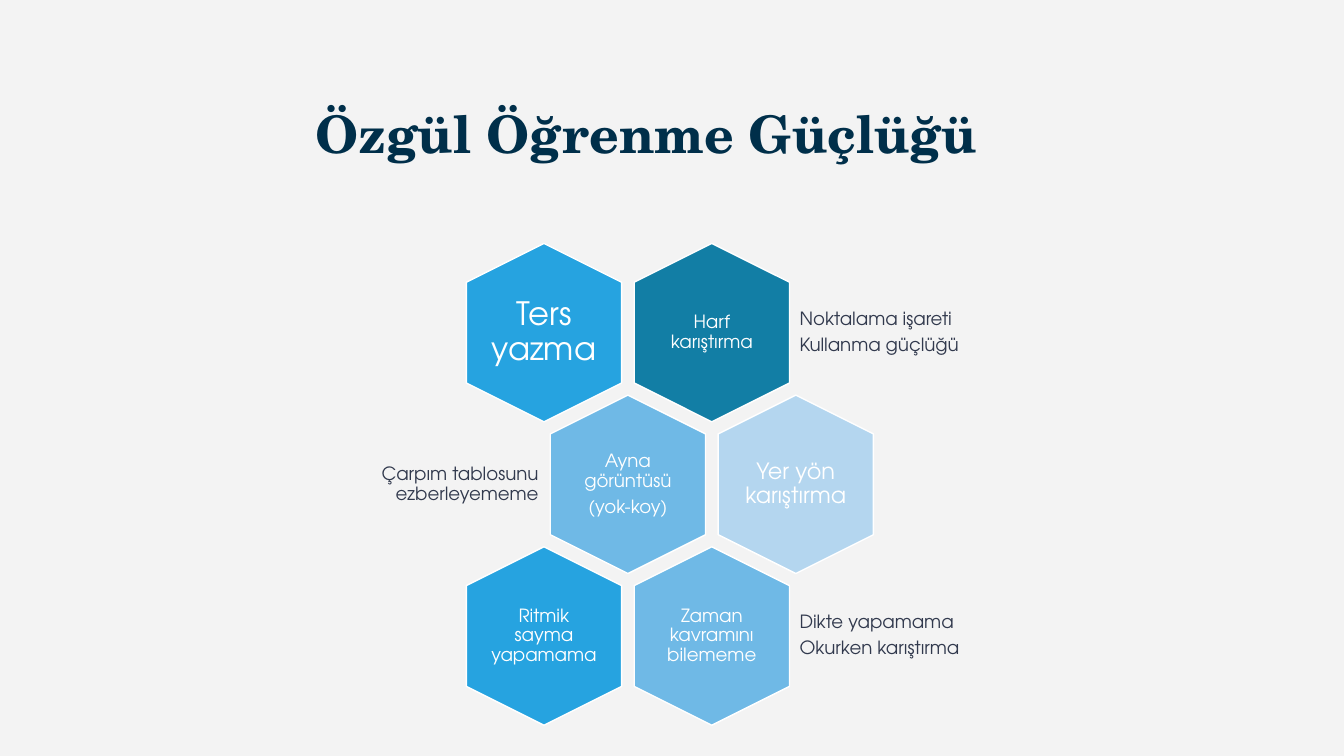
"""Build a slide with a honeycomb of signs of specific learning difficulty."""
from dataclasses import dataclass

from pptx import Presentation
from pptx.dml.color import RGBColor
from pptx.enum.shapes import MSO_SHAPE
from pptx.enum.text import MSO_ANCHOR, PP_ALIGN
from pptx.util import Inches, Pt


@dataclass(frozen=True)
class Theme:
    background: str = "F3F3F3"
    title: str = "002F4A"
    note: str = "31394D"
    white: str = "FFFFFF"
    bright: str = "26A3E0"
    deep: str = "127EA5"
    soft: str = "6FB9E6"
    pale: str = "B4D6EF"
    title_font: str = "TeX Gyre Schola"
    body_font: str = "TeX Gyre Adventor"
    title_size: float = 37
    large_size: float = 23
    medium_size: float = 16
    body_size: float = 13


theme = Theme()


def write_text(shape, lines, size, color, align, font=theme.body_font, bold=False, inset=0.05):
    frame = shape.text_frame
    frame.word_wrap = True
    frame.vertical_anchor = MSO_ANCHOR.MIDDLE
    frame.margin_left = frame.margin_right = Inches(inset)
    frame.margin_top = frame.margin_bottom = Inches(0.05)
    for index, line in enumerate(lines):
        paragraph = frame.add_paragraph() if index else frame.paragraphs[0]
        paragraph.alignment = align
        paragraph.line_spacing = 0.9
        paragraph.space_before = Pt(4.5 if index else 0)
        run = paragraph.add_run()
        run.text = line
        run.font.name = font
        run.font.size = Pt(size)
        run.font.bold = bold
        run.font.color.rgb = RGBColor.from_string(color)


presentation = Presentation()
presentation.slide_width = Inches(13.33)
presentation.slide_height = Inches(7.5)
slide = presentation.slides.add_slide(presentation.slide_layouts[5])
slide.background.fill.solid()
slide.background.fill.fore_color.rgb = RGBColor.from_string(theme.background)

title = slide.shapes.title
title.left, title.top = Inches(0.91), Inches(0.61)
title.width, title.height = Inches(11), Inches(1.5)
write_text(title, ["Özgül Öğrenme Güçlüğü"], theme.title_size, theme.title,
           PP_ALIGN.CENTER, theme.title_font, True, 0.1)

comb_left, comb_top = 4.51, 2.53
column_step, row_step = 1.665, 1.505
hexagon_width, hexagon_height = 1.77, 1.54
label_width, label_height = 1.06, 1.22

hexagons = [
    (0, 1, theme.deep, theme.body_size, 0.05, ["Harf karıştırma"]),
    (0, 0, theme.bright, theme.large_size, 0, ["Ters yazma"]),
    (1, 0.5, theme.soft, theme.body_size, 0.05, ["Ayna görüntüsü", "(yok-koy)"]),
    (1, 1.5, theme.pale, theme.medium_size, 0, ["Yer yön karıştırma"]),
    (2, 1, theme.soft, theme.body_size, 0.05, ["Zaman kavramını bilememe"]),
    (2, 0, theme.bright, theme.body_size, 0, ["Ritmik sayma yapamama"]),
]
for row, column, color, size, inset, lines in hexagons:
    left = comb_left + column * column_step
    top = comb_top + row * row_step
    hexagon = slide.shapes.add_shape(MSO_SHAPE.HEXAGON, Inches(left), Inches(top),
                                     Inches(hexagon_width), Inches(hexagon_height))
    hexagon.rotation = 90
    hexagon.adjustments[0] = 0.25
    hexagon.shadow.inherit = False
    hexagon.fill.solid()
    hexagon.fill.fore_color.rgb = RGBColor.from_string(color)
    hexagon.line.color.rgb = RGBColor.from_string(theme.white)
    hexagon.line.width = Pt(1)
    label = slide.shapes.add_textbox(Inches(left + (hexagon_width - label_width) / 2),
                                     Inches(top + (hexagon_height - label_height) / 2),
                                     Inches(label_width), Inches(label_height))
    write_text(label, lines, size, theme.white, PP_ALIGN.CENTER, inset=inset)

notes = [
    (0, 7.88, 1.98, PP_ALIGN.LEFT, ["Noktalama işareti", "Kullanma güçlüğü"]),
    (1, 3.48, 1.91, PP_ALIGN.RIGHT, ["Çarpım tablosunu ezberleyememe"]),
    (2, 7.88, 1.98, PP_ALIGN.LEFT, ["Dikte yapamama", "Okurken karıştırma"]),
]
note_height = 1.06
for row, left, width, align, lines in notes:
    top = comb_top + row * row_step + (hexagon_height - note_height) / 2
    note = slide.shapes.add_textbox(Inches(left), Inches(top), Inches(width), Inches(note_height))
    write_text(note, lines, theme.body_size, theme.note, align)

presentation.save("out.pptx")
